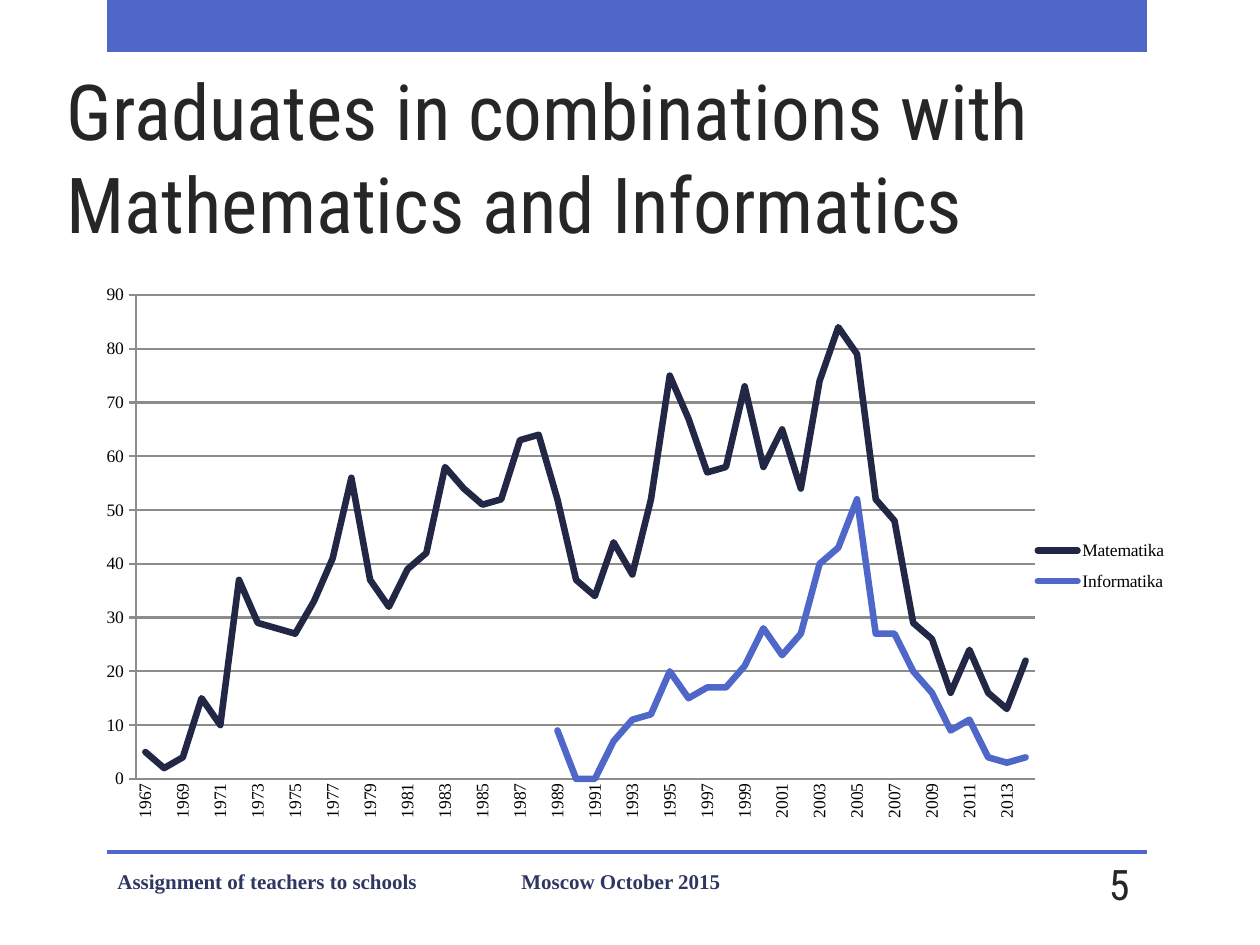
from dataclasses import dataclass

from lxml import etree
from pptx import Presentation
from pptx import util as u
from pptx.chart.data import CategoryChartData
from pptx.dml.color import RGBColor
from pptx.enum import chart as ch, shapes, text
from pptx.oxml import parse_xml
from pptx.oxml.ns import nsdecls, qn

PX_PER_INCH = 126
NAVY, BLUE, GREY, INK = "212745", "4E67C8", "8C8C8C", "262626"
SANS, SERIF = "Roboto Condensed", "Times New Roman"


@dataclass
class Box:
    left: int
    top: int
    width: int
    height: int

    def emu(self) -> tuple:
        return tuple(px(n) for n in (self.left, self.top, self.width, self.height))


@dataclass
class Style:
    size: float
    font: str
    color: str
    bold: bool = False


@dataclass
class Series:
    name: str
    color: str
    first_year: int
    values: list


def px(count: int) -> u.Emu:
    return u.Emu(round(count * 914400 / PX_PER_INCH))


def rgb(value: str) -> RGBColor:
    return RGBColor.from_string(value)


def set_font(font, style: Style) -> None:
    font.size, font.name, font.bold = u.Pt(style.size), style.font, style.bold
    font.color.rgb = rgb(style.color)


def set_line(line, color: str, width: float) -> None:
    line.color.rgb = rgb(color)
    line.width = u.Pt(width)


def add_band(slide, box: Box) -> None:
    band = slide.shapes.add_shape(shapes.MSO_SHAPE.RECTANGLE, *box.emu())
    band.shadow.inherit = False
    band.fill.solid()
    band.fill.fore_color.rgb = rgb(BLUE)
    band.line.fill.background()


def write(shape, words: str, style: Style, anchor, align):
    frame = shape.text_frame
    frame.word_wrap = True
    frame.auto_size = text.MSO_AUTO_SIZE.NONE
    frame.vertical_anchor = anchor
    frame.text = words
    para = frame.paragraphs[0]
    para.alignment = align
    set_font(para.font, style)
    return para


def add_text(slide, box: Box, words: str, style: Style, align=text.PP_ALIGN.LEFT):
    shape = slide.shapes.add_textbox(*box.emu())
    return write(shape, words, style, text.MSO_ANCHOR.MIDDLE, align)


def add_tab_stop(para, position: int) -> None:
    stops = parse_xml(f'<a:tabLst {nsdecls("a")}><a:tab pos="{px(position)}" algn="l"/></a:tabLst>')
    properties = para._p.get_or_add_pPr()
    defaults = properties.find(qn("a:defRPr"))
    defaults.addprevious(stops)


def place(part, after, outer: Box, inner: Box, target: str = "") -> None:
    """Fix the place of a chart part, as shares of the chart's frame."""
    for old in part.findall(qn("c:layout")):
        part.remove(old)
    shares = {
        "x": (inner.left - outer.left) / outer.width,
        "y": (inner.top - outer.top) / outer.height,
        "w": inner.width / outer.width,
        "h": inner.height / outer.height,
    }
    items = [("layoutTarget", target)] if target else []
    items += [("xMode", "edge"), ("yMode", "edge")]
    items += [(key, f"{share:.4f}") for key, share in shares.items()]
    layout = etree.Element(qn("c:layout"))
    manual = etree.SubElement(layout, qn("c:manualLayout"))
    for key, value in items:
        etree.SubElement(manual, qn(f"c:{key}")).set("val", value)
    if after is None:
        part.insert(0, layout)
    else:
        after.addnext(layout)


def add_line_chart(slide, box: Box, plot_box: Box, legend_box: Box,
                   years: range, lines: list) -> None:
    data = CategoryChartData()
    data.categories = [str(year) for year in years]
    for line in lines:
        data.add_series(line.name, [None] * (line.first_year - years[0]) + line.values)
    chart = slide.shapes.add_chart(ch.XL_CHART_TYPE.LINE, *box.emu(), data).chart
    chart.has_title = False
    small = Style(10, SERIF, "000000")
    set_font(chart.font, small)

    # Legend and plot area
    chart.has_legend = True
    legend = chart.legend
    legend.position = ch.XL_LEGEND_POSITION.RIGHT
    legend.include_in_layout = False
    set_font(legend.font, small)
    legend_part = legend._element
    place(legend_part, legend_part.find(qn("c:legendPos")), box, legend_box)
    plot_area = chart._chartSpace.chart.plotArea
    place(plot_area, None, box, plot_box, "inner")

    # Axes
    years_axis, count_axis = chart.category_axis, chart.value_axis
    for axis in (years_axis, count_axis):
        set_font(axis.tick_labels.font, small)
        set_line(axis.format.line, GREY, 1.25)
        axis.minor_tick_mark = ch.XL_TICK_MARK.NONE
    years_axis.major_tick_mark = ch.XL_TICK_MARK.NONE
    years_axis.has_major_gridlines = False
    years_part = years_axis._element
    years_part.find(qn("c:txPr")).find(qn("a:bodyPr")).set("rot", "-5400000")
    skip = etree.Element(qn("c:tickLblSkip"))
    skip.set("val", "2")
    years_part.find(qn("c:noMultiLvlLbl")).addprevious(skip)
    count_axis.major_tick_mark = ch.XL_TICK_MARK.OUTSIDE
    count_axis.minimum_scale, count_axis.maximum_scale = 0, 90
    count_axis.major_unit = 10
    count_axis.has_major_gridlines = True
    set_line(count_axis.major_gridlines.format.line, GREY, 1.25)

    # Lines
    chart.plots[0].vary_by_categories = False
    for series, line in zip(chart.plots[0].series, lines):
        series.smooth = False
        series.marker.style = ch.XL_MARKER_STYLE.NONE
        set_line(series.format.line, line.color, 3.75)
        stroke = series._element.spPr.find(qn("a:ln"))
        stroke.set("cap", "rnd")
        etree.SubElement(stroke, qn("a:round"))


def main() -> None:
    deck = Presentation()
    deck.slide_width, deck.slide_height = px(1260), px(945)
    slide = deck.slides.add_slide(deck.slide_layouts[5])

    # Top band and footer rule
    add_band(slide, Box(107, 0, 1040, 52))
    add_band(slide, Box(107, 850, 1040, 4))

    # Title
    title = slide.shapes.title
    title.left, title.top, title.width, title.height = Box(54, 76, 1109, 179).emu()
    write(title, "Graduates in combinations with Mathematics and Informatics",
          Style(44.1, SANS, INK), text.MSO_ANCHOR.BOTTOM, text.PP_ALIGN.LEFT)

    # Graduates per year
    lines = [
        Series("Matematika", NAVY, 1967, [
            5, 2, 4, 15, 10, 37, 29, 28, 27, 33, 41, 56, 37, 32, 39, 42,
            58, 54, 51, 52, 63, 64, 52, 37, 34, 44, 38, 52, 75, 67, 57, 58,
            73, 58, 65, 54, 74, 84, 79, 52, 48, 29, 26, 16, 24, 16, 13, 22]),
        Series("Informatika", BLUE, 1989, [
            9, 0, 0, 7, 11, 12, 20, 15, 17, 17, 21, 28, 23,
            27, 40, 43, 52, 27, 27, 20, 16, 9, 11, 4, 3, 4]),
    ]
    add_line_chart(slide, Box(84, 275, 1121, 556), Box(136, 295, 899, 484),
                   Box(1031, 530, 140, 72), range(1967, 2015), lines)

    # Footer and page number
    footer = add_text(slide, Box(105, 856, 672, 50),
                      "Assignment of teachers to schools\tMoscow October 2015",
                      Style(12, SERIF, "2E3761", True))
    add_tab_stop(footer, 404)
    add_text(slide, Box(1037, 859, 105, 50), "5", Style(24, SANS, INK), text.PP_ALIGN.RIGHT)

    deck.save("out.pptx")


if __name__ == "__main__":
    main()
